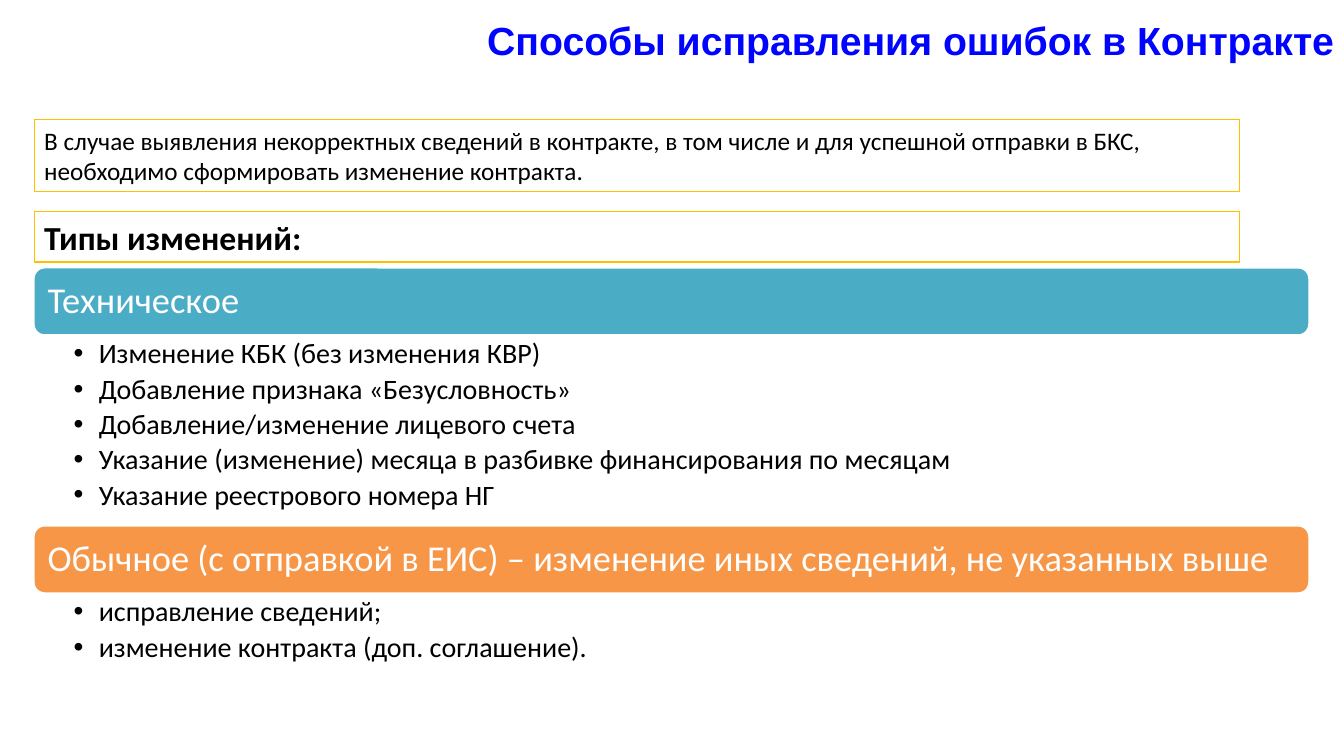
"""Build the slide on ways to correct errors in a contract."""
from dataclasses import dataclass

from lxml import etree
from pptx import Presentation
from pptx.dml.color import RGBColor
from pptx.enum import shapes, text
from pptx.oxml.ns import qn
from pptx.util import Inches, Pt


@dataclass(frozen=True)
class Theme:
    """Colours, fonts and type sizes of the slide."""
    title_font: str = "Arial"
    body_font: str = "Calibri"
    title: str = "0003FF"
    ink: str = "000000"
    paper: str = "FFFFFF"
    frame: str = "FFC000"
    technical: str = "4BACC6"
    regular: str = "F79646"
    title_size: int = 28
    note_size: int = 18
    caption_size: int = 24
    banner_size: int = 26
    item_size: int = 20


THEME = Theme()
LIST_LEFT, LIST_WIDTH, BANNER_HEIGHT = 0.33, 12.66, 0.68

CHANGE_TYPES = [
    ("Техническое", THEME.technical, 2.65, 1.88, [
        "Изменение КБК (без изменения КВР)",
        "Добавление признака «Безусловность»",
        "Добавление/изменение лицевого счета",
        "Указание (изменение) месяца в разбивке финансирования по месяцам",
        "Указание реестрового номера НГ",
    ]),
    ("Обычное (с отправкой в ЕИС) – изменение иных сведений, не указанных выше",
     THEME.regular, 5.21, 0.77, [
         "исправление сведений;",
         "изменение контракта (доп. соглашение).",
     ]),
]


def style_paragraph(paragraph, size, color, bold=False, font=THEME.body_font):
    """Apply one type style to the runs of a paragraph."""
    for run in paragraph.runs:
        run.font.name = font
        run.font.size = Pt(size)
        run.font.bold = bold
        run.font.color.rgb = RGBColor.from_string(color)


def add_panel(parent, kind, box, fill, line, line_width):
    """Add a filled, outlined shape with left-aligned text."""
    panel = parent.add_shape(kind, *map(Inches, box))
    panel.shadow.inherit = False
    panel.fill.solid()
    panel.fill.fore_color.rgb = RGBColor.from_string(fill)
    panel.line.color.rgb = RGBColor.from_string(line)
    panel.line.width = Pt(line_width)
    panel.text_frame.word_wrap = True
    panel.text_frame.paragraphs[0].alignment = text.PP_ALIGN.LEFT
    return panel


def add_title(slide, wording):
    """Add the right-aligned slide heading."""
    heading = slide.shapes.add_textbox(Inches(0), Inches(0.11), Inches(13.33), Inches(0.57))
    frame = heading.text_frame
    frame.word_wrap = True
    frame.auto_size = text.MSO_AUTO_SIZE.SHAPE_TO_FIT_TEXT
    frame.text = wording
    frame.paragraphs[0].alignment = text.PP_ALIGN.RIGHT
    style_paragraph(frame.paragraphs[0], THEME.title_size, THEME.title, True, THEME.title_font)


def add_framed_note(slide, wording, top, height, size, bold=False):
    """Add a white note with a thin yellow frame."""
    note = add_panel(slide.shapes, shapes.MSO_SHAPE.RECTANGLE,
                     (0.34, top, 11.95, height), THEME.paper, THEME.frame, 0.75)
    frame = note.text_frame
    frame.vertical_anchor = text.MSO_ANCHOR.TOP
    frame.auto_size = text.MSO_AUTO_SIZE.SHAPE_TO_FIT_TEXT
    frame.text = wording
    style_paragraph(frame.paragraphs[0], size, THEME.ink, bold)


def add_banner(parent, wording, fill, top):
    """Add the rounded heading of one change type."""
    banner = add_panel(parent, shapes.MSO_SHAPE.ROUNDED_RECTANGLE,
                       (LIST_LEFT, top, LIST_WIDTH, BANNER_HEIGHT), fill, THEME.paper, 2)
    frame = banner.text_frame
    frame.margin_left = frame.margin_right = Inches(0.11)
    frame.vertical_anchor = text.MSO_ANCHOR.MIDDLE
    frame.text = wording
    frame.paragraphs[0].line_spacing = 0.9
    style_paragraph(frame.paragraphs[0], THEME.banner_size, THEME.paper)


def add_bullet(paragraph):
    """Give a paragraph a round bullet with a hanging indent."""
    properties = paragraph._p.get_or_add_pPr()
    properties.set("marL", str(Inches(0.25)))
    properties.set("indent", str(Inches(-0.25)))
    etree.SubElement(properties, qn("a:buFont")).set("typeface", "Arial")
    etree.SubElement(properties, qn("a:buChar")).set("char", "•")


def add_items(parent, items, top, height):
    """Add the bulleted list below a banner."""
    listing = parent.add_textbox(*map(Inches, (LIST_LEFT, top, LIST_WIDTH, height)))
    frame = listing.text_frame
    frame.word_wrap = True
    frame.margin_left, frame.margin_right = Inches(0.4), Inches(0.2)
    frame.margin_top = frame.margin_bottom = Inches(0.04)
    frame.text = "\n".join(items)
    for item in frame.paragraphs:
        add_bullet(item)
        item.level = 1
        item.line_spacing = 0.9
        item.space_after = Pt(3.6)
        style_paragraph(item, THEME.item_size, THEME.ink)


def main():
    """Assemble and save the slide."""
    deck = Presentation()
    deck.slide_width, deck.slide_height = Inches(13.33), Inches(7.5)
    slide = deck.slides.add_slide(deck.slide_layouts[6])
    add_title(slide, "Способы исправления ошибок в Контракте")
    add_framed_note(slide, "В случае выявления некорректных сведений в контракте, в том числе и для "
                    "успешной отправки в БКС, необходимо сформировать изменение контракта.",
                    1.19, 0.71, THEME.note_size)
    add_framed_note(slide, "Типы изменений:", 2.1, 0.5, THEME.caption_size, bold=True)
    change_types = slide.shapes.add_group_shape().shapes
    for heading, fill, top, list_height, items in CHANGE_TYPES:
        add_banner(change_types, heading, fill, top)
        add_items(change_types, items, top + BANNER_HEIGHT, list_height)
    deck.save("out.pptx")


if __name__ == "__main__":
    main()
